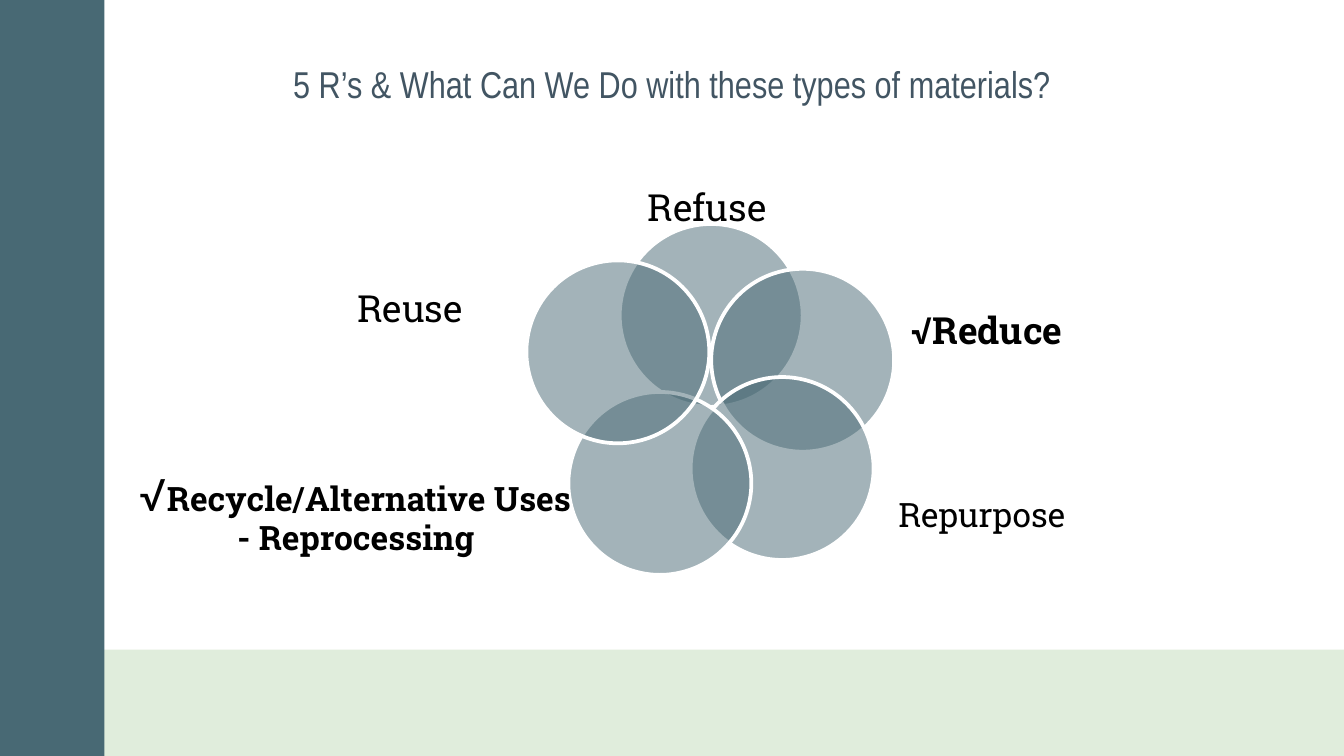
from lxml import etree
from pptx import Presentation
from pptx import util as u
from pptx.dml.color import RGBColor
from pptx.enum import shapes, text
from pptx.oxml.ns import qn

Pt = u.Pt
HUES = {"teal": "486974", "mint": "E0EDDC", "slate": "425563",
        "ink": "000000", "white": "FFFFFF"}
SLAB = "Roboto Slab"
SIZE = 98
PETALS = [
    ((262, 41), (252, 0, 114, 66), [("Refuse", 20, False)]),
    ((311, 65), (408, 63.5, 101.5, 71), [("√Reduce", 20, True)]),
    ((300, 123), (374, 162, 164, 71), [("Repurpose", 18, False)]),
    ((234.5, 131), (0.5, 161.5, 240, 71),
     [("√", 24, False), ("Recycle/Alternative Uses - Reprocessing", 18, True)]),
    ((212, 60.5), (99, 52, 101.5, 71), [("Reuse", 20, False)]),
]


def hue(name):
    """Return the named colour."""
    return RGBColor.from_string(HUES[name])


def write(par, words, size, face, tint, bold=False):
    """Add one styled run to a paragraph."""
    run = par.add_run()
    run.text = words
    run.font.size = Pt(size)
    run.font.name = face
    run.font.bold = bold
    run.font.color.rgb = hue(tint)


def inset(frame, side, top):
    """Set the side and top margins of a text frame."""
    frame.margin_left = frame.margin_right = Pt(side)
    frame.margin_top = frame.margin_bottom = Pt(top)


def solid(tree, kind, box, tint):
    """Add a flat shape without line or shadow."""
    shape = tree.add_shape(kind, *map(Pt, box))
    shape.shadow.inherit = False
    shape.fill.solid()
    shape.fill.fore_color.rgb = hue(tint)
    shape.line.fill.background()
    return shape


def bands(slide, box):
    """Place the bottom and left bands inside the box."""
    left, top, wide, high = box
    rect = shapes.MSO_SHAPE.RECTANGLE
    solid(slide.shapes, rect, (left, top + high - 57, wide, 57), "mint")
    solid(slide.shapes, rect, (left, top, 56, high), "teal")


def title(slide, box):
    """Place and format the title in the box."""
    head = slide.shapes.title
    head.left, head.top, head.width, head.height = map(Pt, box)
    frame = head.text_frame
    frame.word_wrap = True
    frame.auto_size = text.MSO_AUTO_SIZE.NONE
    frame.vertical_anchor = text.MSO_ANCHOR.TOP
    inset(frame, 7.2, 0)
    par = frame.paragraphs[0]
    par.alignment = text.PP_ALIGN.CENTER
    par.line_spacing = 0.9
    write(par, "5 R’s & What Can We Do with these types of materials?",
          20, "Arial Narrow", "slate")


def petal(tree, box):
    """Add one half-clear circle in the box."""
    disc = solid(tree, shapes.MSO_SHAPE.OVAL, box, "teal")
    disc.line.color.rgb = hue("white")
    disc.line.width = Pt(2)
    tone = disc.fill._xPr.find(qn("a:solidFill")).find(qn("a:srgbClr"))
    etree.SubElement(tone, qn("a:alpha"), val="50000")


def label(tree, box, runs):
    """Add a centred label in the box."""
    frame = tree.add_textbox(*map(Pt, box)).text_frame
    frame.word_wrap = True
    frame.vertical_anchor = text.MSO_ANCHOR.MIDDLE
    inset(frame, 0, 0)
    par = frame.paragraphs[0]
    par.alignment = text.PP_ALIGN.CENTER
    par.line_spacing = 0.9
    par.space_after = Pt(7)
    for words, size, bold in runs:
        write(par, words, size, SLAB, "ink", bold)


def flower(slide, box):
    """Place the five circles and their labels from the corner of the box."""
    left, top = box[:2]
    tree = slide.shapes.add_group_shape().shapes
    for (x, y), (tx, ty, wide, high), runs in PETALS:
        petal(tree, (left + x, top + y, SIZE, SIZE))
        label(tree, (left + tx, top + ty, wide, high), runs)


def main():
    """Build and save the slide."""
    deck = Presentation()
    deck.slide_width, deck.slide_height = Pt(720), Pt(405)
    slide = deck.slides.add_slide(deck.slide_layouts[5])
    bands(slide, (0, 0, 720, 405))
    title(slide, (24.5, 35.3, 671, 45.4))
    flower(slide, (70, 79, 538, 233))
    deck.save("out.pptx")


if __name__ == "__main__":
    main()
